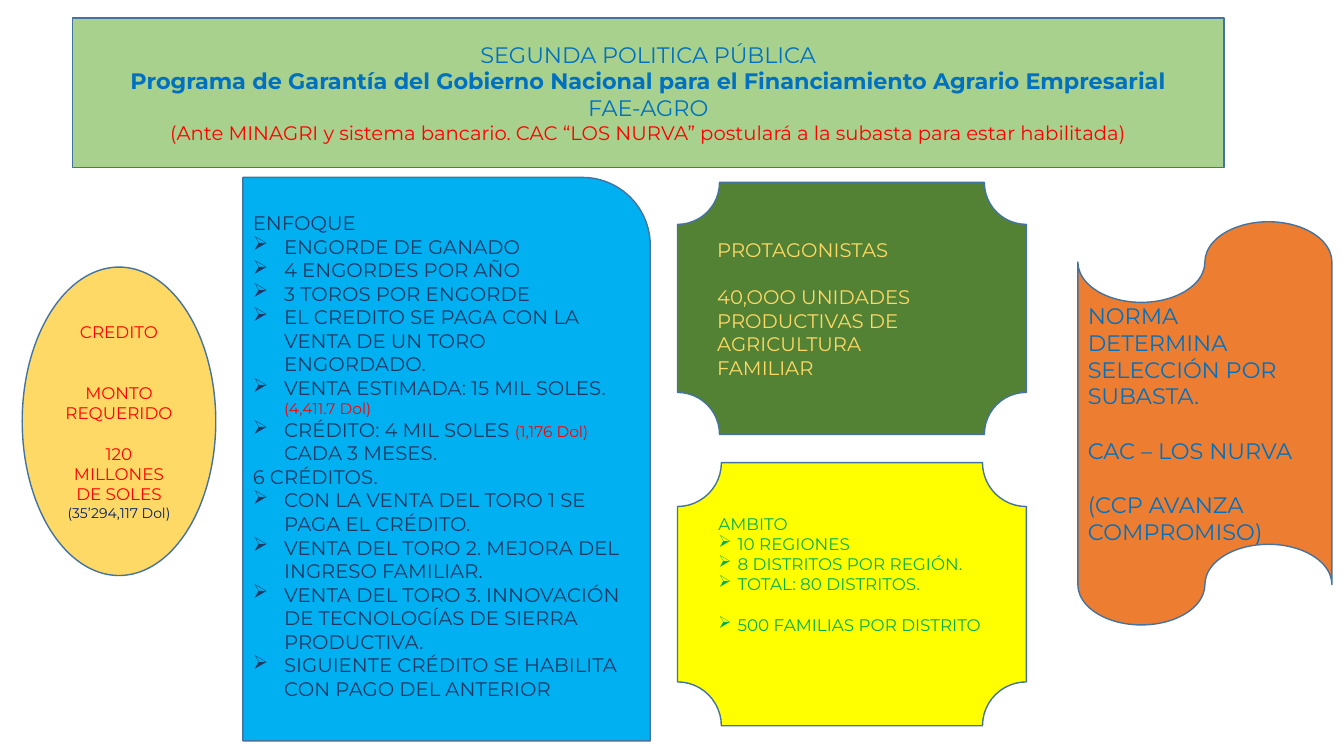
from lxml import etree
from pptx import Presentation
from pptx.dml.color import RGBColor
from pptx.enum.shapes import MSO_SHAPE
from pptx.enum.text import MSO_ANCHOR, MSO_AUTO_SIZE, PP_ALIGN
from pptx.oxml.ns import qn
from pptx.util import Inches, Pt

CENTER, LEFT = PP_ALIGN.CENTER, PP_ALIGN.LEFT
MIDDLE, NO_AUTOSIZE = MSO_ANCHOR.MIDDLE, MSO_AUTO_SIZE.NONE
ELLIPSE, PLAQUE = MSO_SHAPE.OVAL, MSO_SHAPE.PLAQUE
ROUNDED_CORNER, TAPE = MSO_SHAPE.ROUND_1_RECTANGLE, MSO_SHAPE.FLOWCHART_PUNCHED_TAPE
FONT = "Montserrat"
LINE_HEIGHT = 1.22
COLORS = {
    "outline": "43739E", "banner": "A9D18E", "sand": "FFD966", "forest": "548235",
    "orange": "ED7D31", "yellow": "FFFF00", "sky": "00B0F0", "blue": "0070C0",
    "red": "FF0000", "navy": "002060", "ink": "203864", "green": "00B050",
}


def color_of(name):
    """Return the RGB colour with the given name."""
    return RGBColor.from_string(COLORS[name])


def write(frame, text, size=14, color="ink", bold=False, align=LEFT,
          gap_lines=0, bullet_indent=0, paragraph=None):
    """Write a new paragraph, or one more run of the given paragraph."""
    if paragraph is None:
        paragraph = frame.paragraphs[0]
        if paragraph.runs:
            paragraph = frame.add_paragraph()
        paragraph.alignment = align
        paragraph.space_before = Pt(round(gap_lines * size * LINE_HEIGHT, 1))
        if bullet_indent:
            properties = paragraph._p.get_or_add_pPr()
            properties.set("marL", str(Inches(bullet_indent)))
            properties.set("indent", str(-Inches(bullet_indent)))
            etree.SubElement(properties, qn("a:buChar")).set("char", "➢")
    run = paragraph.add_run()
    run.text = text
    run.font.name = FONT
    run.font.size = Pt(size)
    run.font.bold = bold
    run.font.color.rgb = color_of(color)
    return paragraph


def format_panel(shape, fill, bottom_inset=0.05):
    """Fill and outline a shape and return its text frame."""
    shape.fill.solid()
    shape.fill.fore_color.rgb = color_of(fill)
    shape.line.color.rgb = color_of("outline")
    shape.line.width = Pt(1)
    frame = shape.text_frame
    frame.word_wrap = True
    frame.auto_size = NO_AUTOSIZE
    frame.vertical_anchor = MIDDLE
    frame.margin_bottom = Inches(bottom_inset)
    return frame


def add_panel(slide, kind, box, fill, bottom_inset=0.05):
    """Add a panel in the given box and return its text frame."""
    shape = slide.shapes.add_shape(kind, *map(Inches, box))
    shape.shadow.inherit = False
    return format_panel(shape, fill, bottom_inset)


def build_banner(slide, box):
    """Turn the title placeholder into the banner."""
    title = slide.shapes.title
    title.left, title.top, title.width, title.height = map(Inches, box)
    frame = format_panel(title, "banner")
    write(frame, "SEGUNDA POLITICA PÚBLICA", size=16, color="blue", align=CENTER)
    write(frame, "Programa de Garantía del Gobierno Nacional para el Financiamiento "
          "Agrario Empresarial", size=16, color="blue", bold=True, align=CENTER)
    write(frame, "FAE-AGRO", size=16, color="blue", align=CENTER)
    write(frame, "(Ante MINAGRI y sistema bancario. CAC “LOS NURVA” postulará a la "
          "subasta para estar habilitada)", color="red", align=CENTER)


def build_credit(slide, box):
    """Add the ellipse with the amount of credit."""
    frame = add_panel(slide, ELLIPSE, box, "sand")
    for text, gap_lines in (("CREDITO", 0), ("MONTO REQUERIDO", 2),
                            ("120 MILLONES DE SOLES", 1)):
        write(frame, text, size=12, color="red", align=CENTER, gap_lines=gap_lines)
    write(frame, "(35’294,117 Dol)", size=10, color="navy", align=CENTER)


def build_approach(slide, box):
    """Add the blue panel with the approach."""
    frame = add_panel(slide, ROUNDED_CORNER, box, "sky", bottom_inset=0.12)
    indent = 0.31
    write(frame, "ENFOQUE")
    for text in ("ENGORDE DE GANADO", "4 ENGORDES POR AÑO", "3 TOROS POR ENGORDE",
                 "EL CREDITO SE PAGA CON LA VENTA DE UN TORO ENGORDADO."):
        write(frame, text, bullet_indent=indent)
    sale = write(frame, "VENTA ESTIMADA: 15 MIL SOLES. ", bullet_indent=indent)
    write(frame, "(4,411.7 Dol)", size=11, color="red", paragraph=sale)
    credit = write(frame, "CRÉDITO: 4 MIL SOLES ", bullet_indent=indent)
    write(frame, "(1,176 Dol)", size=11, color="red", paragraph=credit)
    write(frame, " CADA 3 MESES.", paragraph=credit)
    write(frame, "6 CRÉDITOS.")
    for text in ("CON LA VENTA DEL TORO 1 SE PAGA EL CRÉDITO.",
                 "VENTA DEL TORO 2. MEJORA DEL INGRESO FAMILIAR.",
                 "VENTA DEL TORO 3. INNOVACIÓN DE TECNOLOGÍAS DE SIERRA PRODUCTIVA.",
                 "SIGUIENTE CRÉDITO SE HABILITA CON PAGO DEL ANTERIOR"):
        write(frame, text, bullet_indent=indent)


def build_protagonists(slide, box):
    """Add the green plaque with the protagonists."""
    frame = add_panel(slide, PLAQUE, box, "forest")
    write(frame, "PROTAGONISTAS", color="sand")
    write(frame, "40,OOO UNIDADES PRODUCTIVAS DE AGRICULTURA", color="sand", gap_lines=1)
    write(frame, "FAMILIAR", color="sand")


def build_scope(slide, box):
    """Add the yellow plaque with the regions and districts."""
    frame = add_panel(slide, PLAQUE, box, "yellow", bottom_inset=0.45)
    write(frame, "AMBITO", size=12, color="green")
    for text, gap_lines in (("10 REGIONES", 0), ("8 DISTRITOS POR REGIÓN.", 0),
                            ("TOTAL: 80 DISTRITOS.", 0),
                            ("500 FAMILIAS POR DISTRITO", 1)):
        write(frame, text, size=12, color="green", gap_lines=gap_lines,
              bullet_indent=0.19)


def build_rule(slide, box):
    """Add the orange tape with the selection rule."""
    frame = add_panel(slide, TAPE, box, "orange")
    for text, gap_lines in (("NORMA DETERMINA SELECCIÓN POR SUBASTA.", 0),
                            ("CAC – LOS NURVA", 1), ("(CCP AVANZA COMPROMISO)", 1)):
        write(frame, text, size=16, color="blue", gap_lines=gap_lines)


def main():
    """Build the slide and save it."""
    presentation = Presentation()
    presentation.slide_width, presentation.slide_height = Inches(13.33), Inches(7.5)
    slide = presentation.slides.add_slide(presentation.slide_layouts[5])
    build_banner(slide, (0.72, 0.18, 11.42, 1.48))
    build_credit(slide, (0.22, 2.65, 1.92, 3.06))
    build_approach(slide, (2.41, 1.76, 4.04, 5.59))
    build_protagonists(slide, (6.72, 1.81, 3.46, 2.5))
    build_scope(slide, (6.72, 4.59, 3.46, 2.61))
    build_rule(slide, (10.69, 2.2, 2.52, 4))
    presentation.save("out.pptx")


if __name__ == "__main__":
    main()
